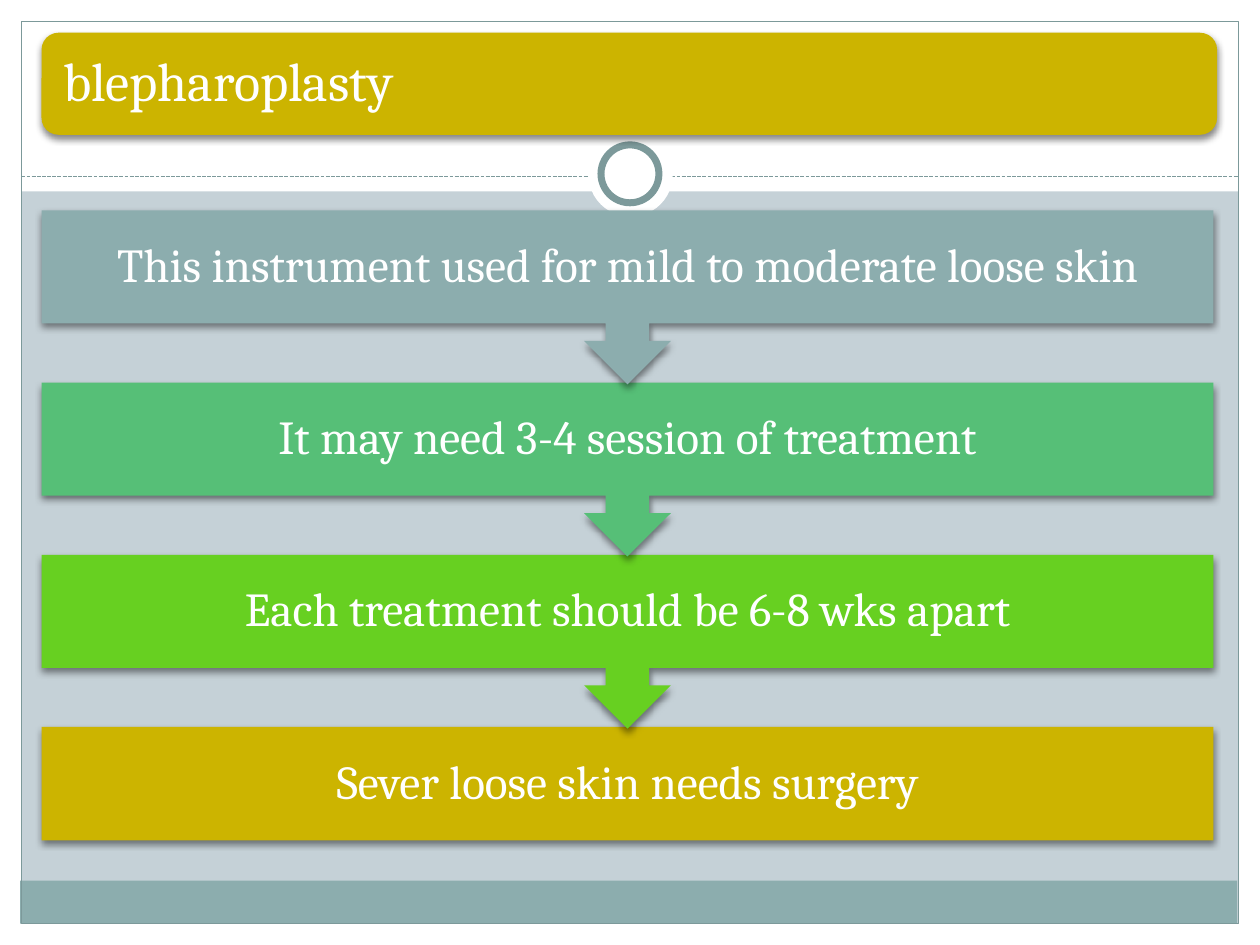
"""Build the blepharoplasty slide: a title bar above four linked steps."""
from typing import NamedTuple, Optional

from lxml import etree
from pptx import Presentation
from pptx import util as u
from pptx.dml.color import RGBColor
from pptx.enum import dml, shapes, text
from pptx.oxml import ns

WHITE = RGBColor(0xFF, 0xFF, 0xFF)
PALE = RGBColor(0xC5, 0xD1, 0xD7)
TEAL = RGBColor(0x8C, 0xAD, 0xAE)
SLATE = RGBColor(0x7C, 0x99, 0x9A)
GREEN = RGBColor(0x56, 0xBF, 0x77)
LIME = RGBColor(0x67, 0xD0, 0x21)
GOLD = RGBColor(0xCC, 0xB4, 0x00)

FONT = "Cambria"
KIND = shapes.MSO_SHAPE
STEP_LEFT, STEP_WIDTH = 0.33, 9.3
STEP_TOP, STEP_PITCH = 1.67, 4.1 / 3
BAR_HEIGHT, CALLOUT_HEIGHT = 0.9, 1.38


class Box(NamedTuple):
    left: float
    top: float
    width: float
    height: float

    def lengths(self) -> list:
        return [u.Inches(value) for value in self]


class Panel(NamedTuple):
    box: Box
    fill: Optional[RGBColor] = WHITE
    kind: KIND = KIND.RECTANGLE
    line_width: float = 0


class Step(NamedTuple):
    label: str
    fill: RGBColor


FRAME = [
    Panel(Box(0, 7.33, 10, 0.17)),
    Panel(Box(0, 0, 10, 1.52)),
    Panel(Box(0, 0, 0.17, 7.5)),
    Panel(Box(9.83, 0, 0.17, 7.5)),
    Panel(Box(0.16, 6.99, 9.66, 0.34), TEAL),
    Panel(Box(0.17, 0.17, 9.66, 7.16), None, line_width=0.75),
]
RINGS = [
    Panel(Box(4.67, 1.05, 0.67, 0.67), kind=KIND.OVAL),
    Panel(Box(4.77, 1.15, 0.46, 0.46), kind=KIND.OVAL, line_width=4),
]
STEPS = [
    Step("This instrument used for mild to moderate loose skin", TEAL),
    Step("It may need 3-4 session of treatment", GREEN),
    Step("Each treatment should be 6-8 wks apart", LIME),
    Step("Sever loose skin needs surgery", GOLD),
]


def add_panel(page, panel: Panel):
    shape = page.shapes.add_shape(panel.kind, *panel.box.lengths())
    shape.shadow.inherit = False
    if panel.fill is None:
        shape.fill.background()
    else:
        shape.fill.solid()
        shape.fill.fore_color.rgb = panel.fill
    if panel.line_width:
        shape.line.color.rgb = SLATE
        shape.line.width = u.Pt(panel.line_width)
    else:
        shape.line.fill.background()
    return shape


def add_shadow(shape) -> None:
    effects = shape._element.spPr.find(ns.qn("a:effectLst"))
    shadow = etree.SubElement(
        effects, ns.qn("a:outerShdw"), blurRad=str(u.Pt(4)),
        dist=str(u.Pt(2)), dir="5400000", rotWithShape="0")
    color = etree.SubElement(shadow, ns.qn("a:srgbClr"), val="000000")
    etree.SubElement(color, ns.qn("a:alpha"), val="45000")


def add_text(page, words: str, *, box: Box, size: float, inset: float,
             align: text.PP_ALIGN) -> None:
    frame = page.shapes.add_textbox(*box.lengths()).text_frame
    frame.word_wrap = True
    frame.vertical_anchor = text.MSO_ANCHOR.MIDDLE
    frame.margin_left = frame.margin_right = u.Inches(inset)
    frame.margin_top = frame.margin_bottom = u.Inches(inset)
    para = frame.paragraphs[0]
    para.alignment = align
    para.line_spacing = 0.9
    span = para.add_run()
    span.text = words
    span.font.name = FONT
    span.font.size = u.Pt(size)
    span.font.color.rgb = WHITE


def add_divider(page) -> None:
    left, right, level = u.Inches(0.17), u.Inches(9.83), u.Inches(1.4)
    divider = page.shapes.add_connector(
        shapes.MSO_CONNECTOR.STRAIGHT, left, level, right, level)
    divider.line.color.rgb = SLATE
    divider.line.width = u.Pt(0.75)
    divider.line.dash_style = dml.MSO_LINE.SQUARE_DOT
    etree.SubElement(divider._element.spPr, ns.qn("a:effectLst"))


def add_title(page) -> None:
    bar = Panel(Box(0.33, 0.26, 9.33, 0.81), GOLD, KIND.ROUNDED_RECTANGLE)
    add_shadow(add_panel(page, bar))
    add_text(page, "blepharoplasty", box=Box(0.37, 0.3, 9.25, 0.73),
             size=31, inset=0.13, align=text.PP_ALIGN.LEFT)


def add_step(page, step: Step, index: int) -> None:
    is_last = index == len(STEPS) - 1
    bar = Box(STEP_LEFT, STEP_TOP + index * STEP_PITCH, STEP_WIDTH, BAR_HEIGHT)
    if is_last:
        shape = add_panel(page, Panel(bar, step.fill))
    else:
        callout = bar._replace(height=CALLOUT_HEIGHT)
        shape = add_panel(page, Panel(callout, step.fill, KIND.UP_ARROW_CALLOUT))
        shape.rotation = 180
    add_shadow(shape)
    add_text(page, step.label, box=bar, size=27, inset=0.21,
             align=text.PP_ALIGN.CENTER)


def main() -> None:
    deck = Presentation()
    deck.slide_width, deck.slide_height = u.Inches(10), u.Inches(7.5)
    page = deck.slides.add_slide(deck.slide_layouts[6])
    page.background.fill.solid()
    page.background.fill.fore_color.rgb = PALE
    for panel in FRAME:
        add_panel(page, panel)
    add_divider(page)
    for ring in RINGS:
        add_panel(page, ring)
    add_title(page)
    for index, step in reversed(list(enumerate(STEPS))):
        add_step(page, step, index)
    deck.save("out.pptx")


if __name__ == "__main__":
    main()
